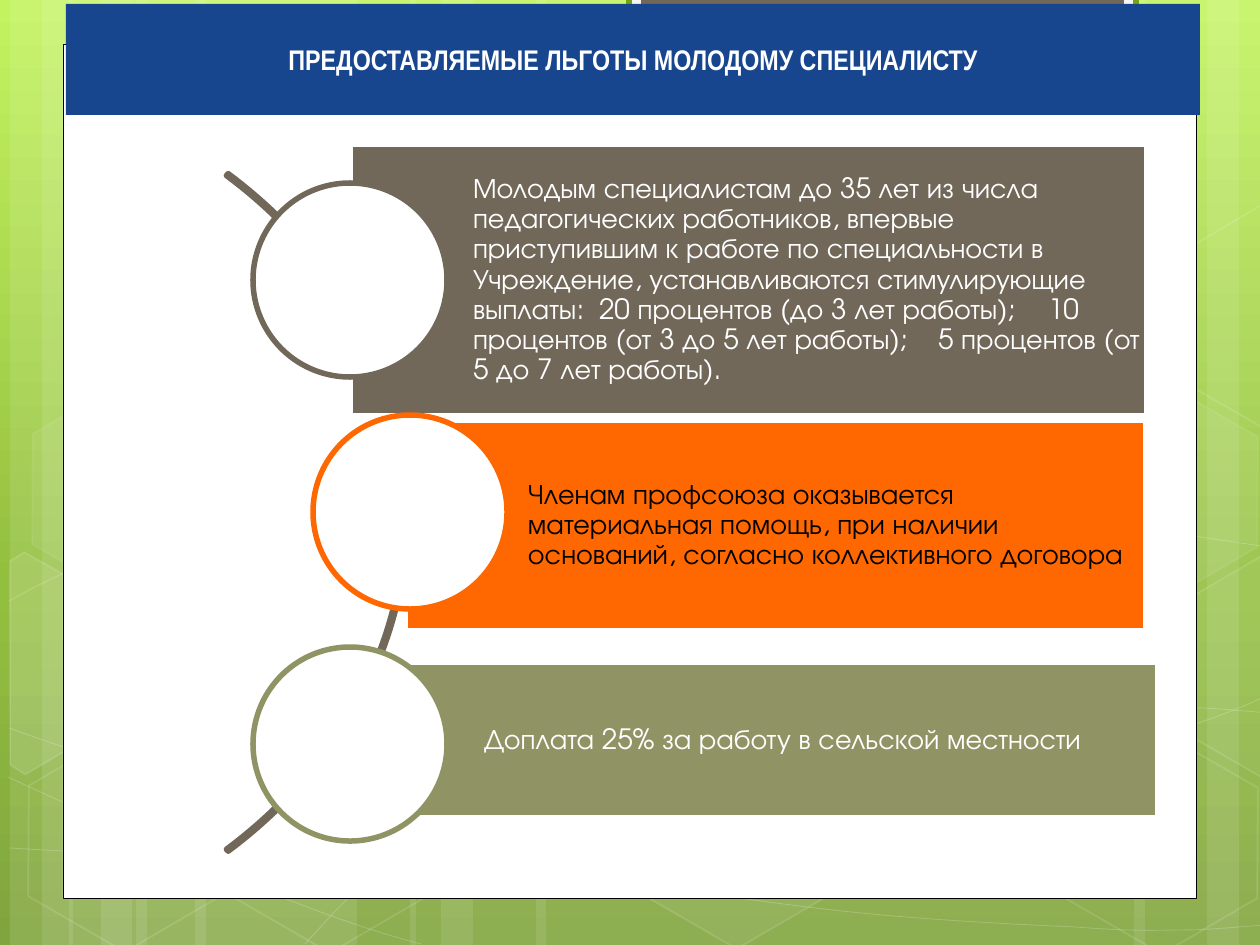
from copy import deepcopy
from math import cos, radians, sin

from lxml.etree import SubElement
from pptx import Presentation
from pptx.dml.color import RGBColor
from pptx.enum.shapes import MSO_SHAPE
from pptx.enum.text import MSO_ANCHOR, PP_ALIGN
from pptx.oxml.ns import qn
from pptx.util import Pt

EMU_PER_PX = 914400 / 126
COLORS = {
    "lime": "C3F35F", "green": "93BF3F", "moss": "81A53E", "frame": "74A510",
    "white": "FFFFFF", "black": "000000", "pale": "F5F5F5", "blue": "17468E",
    "brown": "71685A", "orange": "FF6700", "olive": "909465",
}


def px(*lengths):
    return [round(length * EMU_PER_PX) for length in lengths]


def paint(shape, fill=None, line=None, width=1, fill_alpha=100, line_alpha=100):
    """Set fill and outline by colour name; alpha is the opacity in percent."""
    shape.shadow.inherit = False
    for part, name, alpha in ((shape.fill, fill, fill_alpha),
                              (shape.line.fill, line, line_alpha)):
        if name is None:
            part.background()
            continue
        part.solid()
        part.fore_color.rgb = RGBColor.from_string(COLORS[name])
        if alpha < 100:
            solid = part._xPr.find(qn("a:solidFill"))
            SubElement(solid[0], qn("a:alpha"), val=str(alpha * 1000))
    if line:
        shape.line.width = Pt(width)
    return shape


prs = Presentation()
prs.slide_width, prs.slide_height = px(1260, 945)
slide = prs.slides.add_slide(prs.slide_layouts[6])
shapes = slide.shapes

# Background gradient, light at the top
backdrop = slide.background.fill
backdrop.gradient()
backdrop.gradient_angle = 270
stop_list = next(slide.element.iter(qn("a:gsLst")))
stop_list.append(deepcopy(stop_list[-1]))
for stop, (position, name) in zip(backdrop.gradient_stops,
                                  ((0, "lime"), (0.62, "green"), (1, "moss"))):
    stop.position = position
    stop.color.rgb = RGBColor.from_string(COLORS[name])

# Translucent vertical stripes: left, width
for left, width in ((136, 221), (10, 63), (42, 105), (195, 221), (69, 63), (101, 105),
                    (924, 221), (1207, 63), (1134, 105), (536, 388), (410, 63), (441, 105)):
    paint(shapes.add_shape(MSO_SHAPE.RECTANGLE, *px(left, 0, width, 945)),
          "white", fill_alpha=10)

# Thin waves: a start point, then cubic segments of two controls and an end
WAVES = [
    [(9, 848), (76, 852), (145, 856), (239, 854), (334, 853), (451, 851), (577, 838),
     (703, 825), (882, 802), (998, 777), (1113, 753), (1231, 716), (1269, 694)],
    [(9, 601), (45, 581), (82, 562), (152, 543), (224, 524), (326, 496), (437, 488),
     (549, 480), (685, 478), (824, 488), (963, 498), (1193, 537), (1269, 547)],
    [(8, 777), (160, 847), (311, 916), (421, 944)],
    [(9, 728), (48, 742), (88, 756), (161, 776), (234, 795), (344, 827), (450, 848),
     (554, 869), (687, 892), (791, 905), (896, 919), (1008, 924), (1075, 927),
     (1140, 932), (1158, 930), (1191, 930), (1223, 929), (1246, 926), (1269, 925)],
    [(305, 944), (328, 919), (350, 893), (381, 871), (411, 848), (454, 823), (489, 805),
     (524, 788), (546, 780), (592, 767), (638, 755), (722, 737), (766, 728),
     (811, 719), (818, 719), (857, 717), (896, 713), (958, 709), (1000, 708),
     (1045, 707), (1116, 708), (1201, 708), (1223, 709), (1244, 711), (1268, 713)],
]
for wave in WAVES:
    outline = shapes.build_freeform(*wave[0], scale=EMU_PER_PX)
    outline.add_line_segments(wave[1:], close=False)
    curve = paint(outline.convert_to_shape(), None, "white", 0.5, line_alpha=20)
    # Gather each three straight steps into one cubic segment
    track = next(curve._element.iter(qn("a:lnTo"))).getparent()
    steps = track.findall(qn("a:lnTo"))
    for first in range(0, len(steps), 3):
        cubic = SubElement(track, qn("a:cubicBezTo"))
        for step in steps[first:first + 3]:
            cubic.append(step[0])
            track.remove(step)

# Hexagons: left, top, fill opacity, line opacity
TILT = 30
for left, top, fill_alpha, line_alpha in (
        (421, 45, 4, 8), (626, 742, 6, 12), (14, 745, 0, 12), (18, 393, 7, 8),
        (219, 746, 0, 12), (949, 571, 10, 12), (1051, 747, 0, 12), (1051, 396, 7, 8)):
    hexagon = shapes.add_shape(MSO_SHAPE.HEXAGON, *px(left, top, 221, 192))
    hexagon.adjustments[0] = 0.285
    hexagon.rotation = TILT
    paint(hexagon, "white" if fill_alpha else None, "white", 1, fill_alpha, line_alpha)

# Hexagons cut off by the slide edges: fill opacity, centre, corners as they appear
for fill_alpha, (cx, cy), corners in (
        (10, (45, 674),
         [(10, 561), (24, 552), (121, 607), (120, 718), (25, 774), (10, 765)]),
        (4, (1241, 655),
         [(1167, 611), (1261, 556), (1271, 562), (1271, 772), (1263, 777), (1167, 722)]),
        (0, (1241, 304),
         [(1167, 261), (1261, 205), (1272, 212), (1271, 422), (1263, 427), (1167, 372)])):
    c, s = cos(radians(TILT)), sin(radians(TILT))
    upright = [(cx + (x - cx) * c + (y - cy) * s, cy - (x - cx) * s + (y - cy) * c)
               for x, y in corners]
    outline = shapes.build_freeform(*upright[0], scale=EMU_PER_PX)
    outline.add_line_segments(upright[1:], close=True)
    cut_hexagon = outline.convert_to_shape()
    cut_hexagon.rotation = TILT
    paint(cut_hexagon, "white" if fill_alpha else None, "white", 1, fill_alpha, 12)

# White panel and the tab at its top
for frame, fill, line, width in (
        ((63, 45, 1134, 854), "white", "black", 0.5),
        ((629, -3, 507, 96), "pale", "frame", 3.15),
        ((641, -3, 483, 86), "brown", None, 0)):
    paint(shapes.add_shape(MSO_SHAPE.RECTANGLE, *px(*frame)), fill, line, width)

heading = paint(shapes.add_shape(MSO_SHAPE.RECTANGLE, *px(66, 4, 1134, 111)), "blue")
heading.text_frame.vertical_anchor = MSO_ANCHOR.MIDDLE
heading_line = heading.text_frame.paragraphs[0]
heading_line.text = "ПРЕДОСТАВЛЯЕМЫЕ ЛЬГОТЫ МОЛОДОМУ СПЕЦИАЛИСТУ"
heading_line.alignment = PP_ALIGN.CENTER
heading_line.font.name = "Arial Narrow"
heading_line.font.size = Pt(16.2)
heading_line.font.bold = True
heading_line.font.color.rgb = RGBColor.from_string(COLORS["white"])

arc = shapes.add_shape(MSO_SHAPE.BLOCK_ARC, *px(-629, 65, 1037, 895))
for index, value in enumerate((189, 27, 0.003)):
    arc.adjustments[index] = value
paint(arc, None, "brown", 3.15)

# Benefits: bar frame, circle left, bar colour, text colour, text
BENEFITS = [
    ((350, 144, 797, 272), 253, "brown", "white",
     "Молодым специалистам до 35 лет из числа педагогических работников, впервые "
     "приступившим к работе по специальности в Учреждение, устанавливаются "
     "стимулирующие выплаты:\t20 процентов (до 3 лет работы);\t10 процентов "
     "(от 3 до 5 лет работы);\t5 процентов (от 5 до 7 лет работы)."),
    ((405, 420, 741, 211), 313, "orange", "black",
     "Членам профсоюза оказывается материальная помощь, при наличии оснований, "
     "согласно коллективного договора"),
    ((361, 662, 797, 156), 253, "olive", "white",
     "Доплата 25% за работу в сельской местности"),
]
for row, (frame, circle_left, color, text_color, wording) in enumerate(BENEFITS):
    bar = paint(shapes.add_shape(MSO_SHAPE.RECTANGLE, *px(*frame)), color, "white", 3.15)
    body = bar.text_frame
    body.word_wrap = True
    body.vertical_anchor = MSO_ANCHOR.MIDDLE
    body.margin_left, body.margin_top, body.margin_right, body.margin_bottom = px(123, 5, 5, 5)
    benefit = body.paragraphs[0]
    benefit.text = wording
    benefit.alignment = PP_ALIGN.LEFT
    benefit.line_spacing = 0.9
    if "\t" in wording:
        tabs = SubElement(benefit._p.get_or_add_pPr(), qn("a:tabLst"))
        for position in px(126, 465, 575):
            SubElement(tabs, qn("a:tab"), pos=str(position), algn="l")
    benefit.font.name = "TeX Gyre Adventor"
    benefit.font.size = Pt(16)
    benefit.font.color.rgb = RGBColor.from_string(COLORS[text_color])
    paint(shapes.add_shape(MSO_SHAPE.OVAL, *px(circle_left, 183 + 232 * row, 194, 194)),
          "white", color, 3.15)

prs.save("out.pptx")
